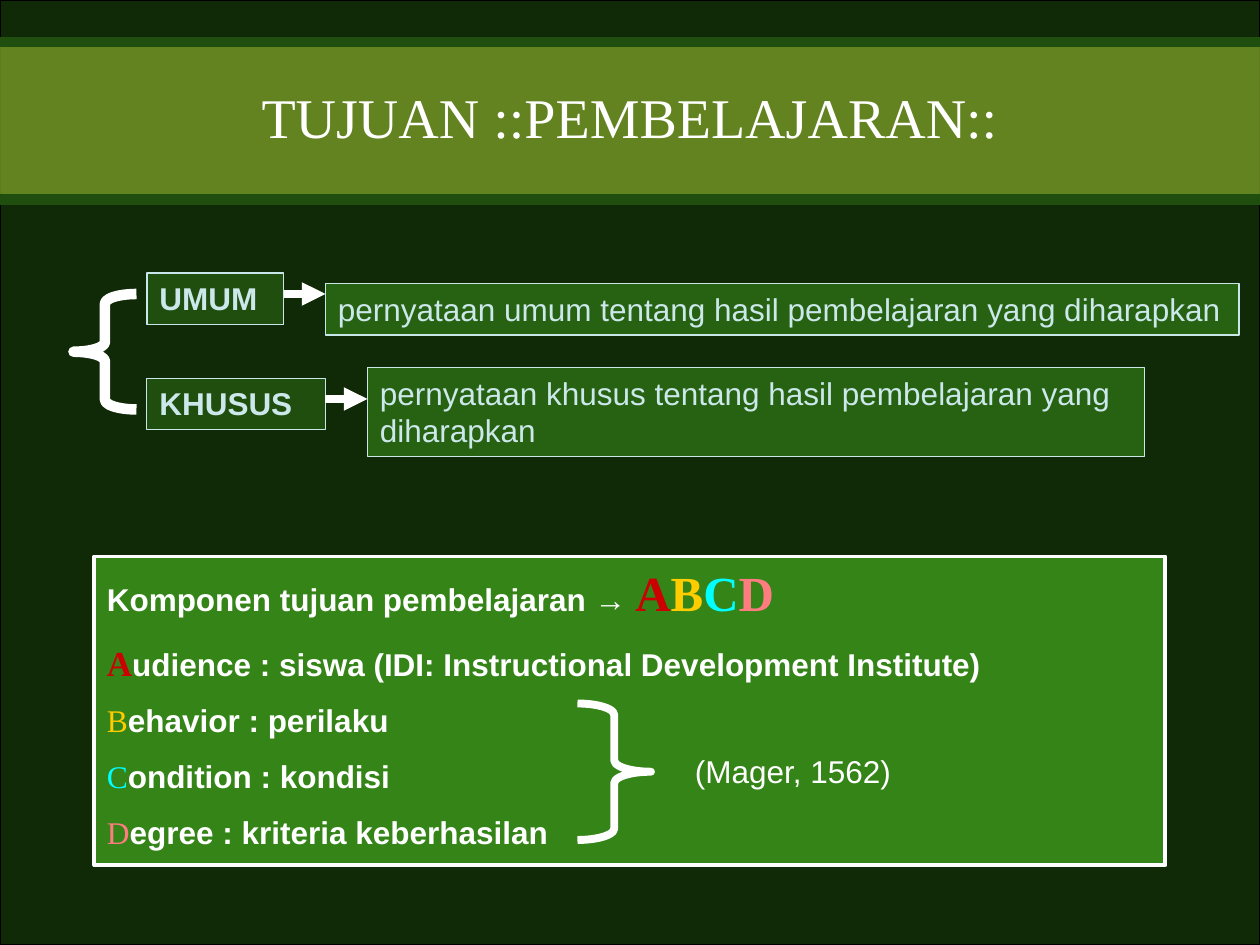
from typing import NamedTuple

from lxml.etree import SubElement
from pptx import Presentation
from pptx.dml.color import RGBColor
from pptx.enum.shapes import MSO_CONNECTOR, MSO_SHAPE
from pptx.enum.text import MSO_ANCHOR, PP_ALIGN
from pptx.oxml.ns import qn
from pptx.util import Inches, Pt

BLACK = RGBColor(0x00, 0x00, 0x00)
WHITE = RGBColor(0xFF, 0xFF, 0xFF)
LIME = RGBColor(0x53, 0xCF, 0x27)
OLIVE = RGBColor(0x78, 0x99, 0x27)
DARK = RGBColor(0x1F, 0x4E, 0x0E)
MOSS = RGBColor(0x27, 0x62, 0x12)
GREEN = RGBColor(0x3E, 0x9B, 0x1D)
EDGE = RGBColor(0xC9, 0xE7, 0xE9)
PALE = RGBColor(0xCC, 0xE8, 0xEA)
RED = RGBColor(0xCC, 0x00, 0x00)
GOLD = RGBColor(0xFF, 0xCC, 0x00)
CYAN = RGBColor(0x00, 0xFF, 0xFF)
PINK = RGBColor(0xFF, 0x7C, 0x80)

SANS, SERIF = "Arial", "Times New Roman"
COLS, ROWS = 120, 90
CELL = Inches(10) / COLS


class Area(NamedTuple):
    """A place on the slide, in grid columns and rows."""
    col: float
    row: float
    wide: float
    high: float


class Goal(NamedTuple):
    name: str
    text: str
    label: Area
    body: Area
    edge: float
    arrow: float


class Part(NamedTuple):
    letter: str
    rest: str
    color: RGBColor
    size: int
    bold: bool


GOALS = [
    Goal("UMUM", "pernyataan umum tentang hasil pembelajaran yang diharapkan",
         Area(14, 26, 13, 4.9), Area(31, 27, 87, 4.9), 0.75, 28),
    Goal("KHUSUS", "pernyataan khusus tentang hasil pembelajaran yang diharapkan",
         Area(14, 36, 17, 4.9), Area(35, 35, 74, 8.5), 0.5, 38),
]
PARTS = [
    Part("A", "udience : siswa (IDI: Instructional Development Institute)", RED, 20, True),
    Part("B", "ehavior : perilaku", GOLD, 18, False),
    Part("C", "ondition : kondisi", CYAN, 18, False),
    Part("D", "egree : kriteria keberhasilan", PINK, 18, False),
]


def grid(*units: float) -> list[int]:
    return [round(unit * CELL) for unit in units]


def write(para, text: str, *, size: float = 18, font: str = SANS,
          color: RGBColor = WHITE, bold: bool = False) -> None:
    run = para.add_run()
    run.text = text
    run.font.size, run.font.name, run.font.bold = Pt(size), font, bold
    run.font.color.rgb = color


def shape(slide, kind, area: Area, *, fill=None, alpha: int = 100,
          line=None, width: float = 0.75):
    """Draw a preset shape; alpha is the fill's opacity in percent."""
    item = slide.shapes.add_shape(kind, *grid(*area))
    item.shadow.inherit = False
    if fill is None:
        item.fill.background()
    else:
        item.fill.solid()
        item.fill.fore_color.rgb = fill
        if alpha < 100:
            tint = item._element.spPr.find(qn("a:solidFill"))[0]
            SubElement(tint, qn("a:alpha"), val=str(alpha * 1000))
    if line is None:
        item.line.fill.background()
    else:
        item.line.color.rgb = line
        item.line.width = Pt(width)
    frame = item.text_frame
    frame.word_wrap = True
    frame.vertical_anchor = MSO_ANCHOR.TOP
    frame.paragraphs[0].alignment = PP_ALIGN.LEFT
    return item


def rule(slide, start: tuple, end: tuple, *, color: RGBColor,
         width: float, arrow: bool = False) -> None:
    item = slide.shapes.add_connector(MSO_CONNECTOR.STRAIGHT, *grid(*start, *end))
    item.line.color.rgb = color
    item.line.width = Pt(width)
    if arrow:
        SubElement(item.line._get_or_add_ln(), qn("a:tailEnd"), type="triangle")
    SubElement(item._element.spPr, qn("a:effectLst"))


def brace(slide, kind, area: Area, *, width: float, curl: float) -> None:
    item = shape(slide, kind, area, line=WHITE, width=width)
    item.adjustments[0] = curl
    item.adjustments[1] = 0.5


def header(slide) -> None:
    title = shape(slide, MSO_SHAPE.RECTANGLE, Area(0, 3.6, COLS, 15),
                  fill=OLIVE, alpha=80)
    title.text_frame.vertical_anchor = MSO_ANCHOR.MIDDLE
    para = title.text_frame.paragraphs[0]
    para.alignment = PP_ALIGN.CENTER
    write(para, "TUJUAN ::PEMBELAJARAN::", size=32, font=SERIF)
    for row in (4, 19):
        rule(slide, (0, row), (COLS, row), color=DARK, width=6)


def goals(slide) -> None:
    for goal in GOALS:
        label = shape(slide, MSO_SHAPE.RECTANGLE, goal.label,
                      fill=DARK, line=EDGE, width=goal.edge)
        write(label.text_frame.paragraphs[0], goal.name, color=PALE, bold=True)
        body = shape(slide, MSO_SHAPE.RECTANGLE, goal.body, fill=MOSS, line=EDGE)
        write(body.text_frame.paragraphs[0], goal.text, color=PALE)
        rule(slide, (goal.label.col + goal.label.wide, goal.arrow),
             (goal.body.col, goal.arrow), color=WHITE, width=4.5, arrow=True)
    brace(slide, MSO_SHAPE.LEFT_BRACE, Area(7, 28, 6, 11), width=6, curl=0.153)


def parts(slide) -> None:
    panel = shape(slide, MSO_SHAPE.RECTANGLE, Area(9, 53, 102, 29.4),
                  fill=GREEN, alpha=80, line=WHITE, width=2.25)
    frame = panel.text_frame
    head = frame.paragraphs[0]
    write(head, "Komponen tujuan pembelajaran → ", bold=True)
    for part in PARTS:
        write(head, part.letter, size=28, font=SERIF, color=part.color, bold=True)
    for part in PARTS:
        para = frame.add_paragraph()
        para.alignment = PP_ALIGN.LEFT
        para.space_before = Pt(round(part.size * 0.57, 1))
        write(para, part.letter, size=part.size, font=SERIF,
              color=part.color, bold=part.bold)
        write(para, part.rest, bold=True)
    brace(slide, MSO_SHAPE.RIGHT_BRACE, Area(55, 67, 7, 13), width=4.5, curl=0.155)
    note = slide.shapes.add_textbox(*grid(65, 71, 21.2, 4.8))
    note.text_frame.word_wrap = True
    write(note.text_frame.paragraphs[0], "(Mager, 1562)")


def main() -> None:
    deck = Presentation()
    deck.slide_width, deck.slide_height = grid(COLS, ROWS)
    slide = deck.slides.add_slide(deck.slide_layouts[6])
    slide.background.fill.solid()
    slide.background.fill.fore_color.rgb = BLACK
    shape(slide, MSO_SHAPE.RECTANGLE, Area(0, 0, COLS, ROWS),
          fill=LIME, alpha=20, line=BLACK)
    header(slide)
    goals(slide)
    parts(slide)
    deck.save("out.pptx")


if __name__ == "__main__":
    main()
